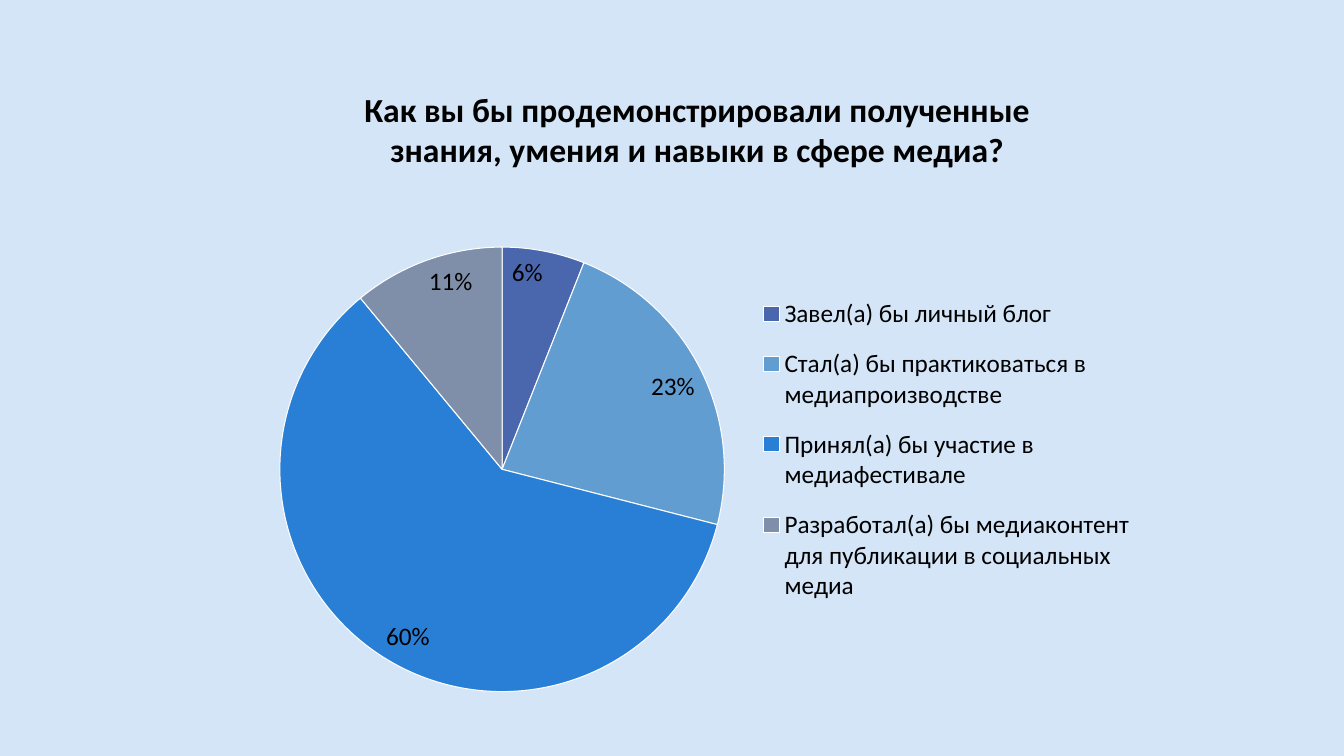
"""Build a survey slide with one pie chart."""
import typing

import pptx
import pptx.chart.data
import pptx.dml.color
import pptx.enum.chart
import pptx.oxml
import pptx.oxml.ns
import pptx.util

PX = 9525
FONT = "Calibri"
TITLE = "Как вы бы продемонстрировали полученные знания, умения и навыки в сфере медиа?"
HUES = {
    "back": "D4E5F7",
    "text": "000000",
    "edge": "FFFFFF",
    "blog": "4A66AC",
    "work": "629DD1",
    "fest": "297FD5",
    "post": "7F8FA9",
}


class Slice(typing.NamedTuple):
    label: str
    value: int
    hue: str


class Box(typing.NamedTuple):
    x: float
    y: float
    w: float
    h: float


SLICES = [
    Slice("Завел(а) бы личный блог", 6, "blog"),
    Slice("Стал(а) бы практиковаться в медиапроизводстве", 23, "work"),
    Slice("Принял(а) бы участие в медиафестивале", 60, "fest"),
    Slice("Разработал(а) бы медиаконтент для публикации в социальных медиа", 11, "post"),
]
FRAME = Box(232, 59, 864, 626)
PIE = Box(0.04, 0.28, 0.49, 0.68)
KEY = Box(0.56, 0.33, 0.43, 0.52)


def color(name: str) -> pptx.dml.color.RGBColor:
    return pptx.dml.color.RGBColor.from_string(HUES[name])


def apply(target: typing.Any, values: dict[str, typing.Any]) -> None:
    for name, value in values.items():
        setattr(target, name, value)


def style(font: typing.Any, size: int, bold: bool = False) -> None:
    apply(font, {"name": FONT, "size": pptx.util.Pt(size), "bold": bold})
    font.color.rgb = color("text")


def paint(fill: typing.Any, hue: str) -> None:
    fill.solid()
    fill.fore_color.rgb = color(hue)


def place(node: typing.Any, index: int, box: Box, inner: bool = False) -> None:
    for old in node.findall(pptx.oxml.ns.qn("c:layout")):
        node.remove(old)
    rules = {"layoutTarget": "inner"} if inner else {}
    rules |= {"xMode": "edge", "yMode": "edge"} | box._asdict()
    parts = "".join(f'<c:{tag} val="{value}"/>' for tag, value in rules.items())
    names = pptx.oxml.ns.nsdecls("c")
    layout = f"<c:layout {names}><c:manualLayout>{parts}</c:manualLayout></c:layout>"
    node.insert(index, pptx.oxml.parse_xml(layout))


def draw(slide: typing.Any) -> None:
    data = pptx.chart.data.CategoryChartData()
    data.categories = [item.label for item in SLICES]
    data.add_series("Series 1", [item.value for item in SLICES])
    frame = [side * PX for side in FRAME]
    kind = pptx.enum.chart.XL_CHART_TYPE.PIE
    chart = slide.shapes.add_chart(kind, *frame, data).chart
    style(chart.font, 18)

    apply(chart, {"has_title": True, "has_legend": True})
    title = chart.chart_title.text_frame
    title.text = TITLE
    style(title.paragraphs[0].runs[0].font, 24, True)

    side = pptx.enum.chart.XL_LEGEND_POSITION.RIGHT
    apply(chart.legend, {"position": side, "include_in_layout": False})
    style(chart.legend.font, 18)

    plot = chart.plots[0]
    apply(plot, {"vary_by_categories": True, "has_data_labels": True})
    spot = pptx.enum.chart.XL_LABEL_POSITION.INSIDE_END
    apply(plot.data_labels, {
        "show_percentage": True,
        "show_value": False,
        "number_format": "0%",
        "number_format_is_linked": False,
        "position": spot,
    })
    style(plot.data_labels.font, 18)
    for index, item in enumerate(SLICES):
        form = plot.series[0].points[index].format
        paint(form.fill, item.hue)
        paint(form.line.fill, "edge")
        form.line.width = pptx.util.Pt(0.75)

    root = chart.element if hasattr(chart, "element") else chart._chartSpace
    place(root.find(".//" + pptx.oxml.ns.qn("c:plotArea")), 0, PIE, True)
    place(root.find(".//" + pptx.oxml.ns.qn("c:legend")), 1, KEY)


def main() -> None:
    deck = pptx.Presentation()
    apply(deck, {"slide_width": 1280 * PX, "slide_height": 720 * PX})
    slide = deck.slides.add_slide(deck.slide_layouts[6])
    paint(slide.background.fill, "back")
    draw(slide)
    deck.save("out.pptx")


if __name__ == "__main__":
    main()
